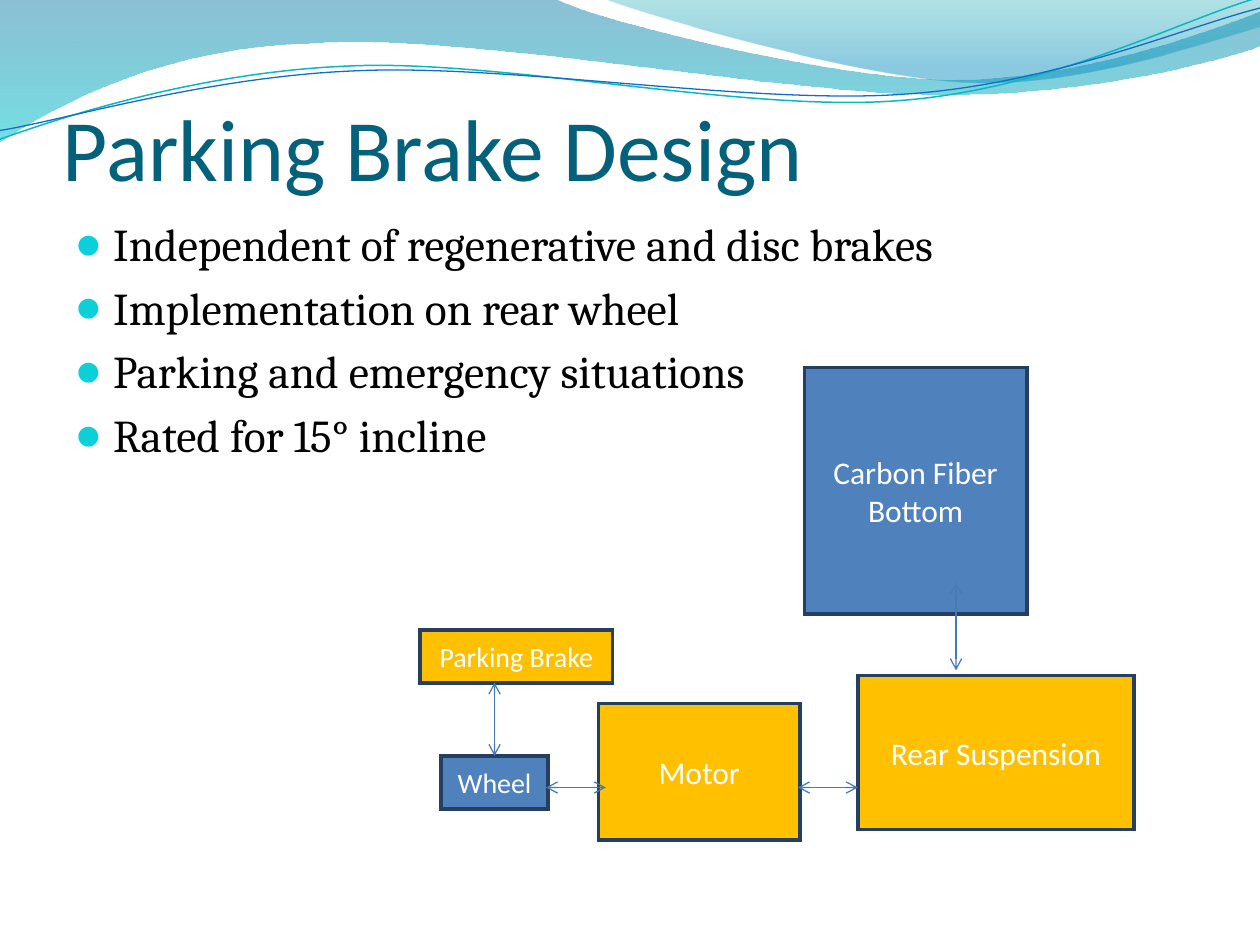
import dataclasses
import typing

import lxml.etree
import pptx
import pptx.dml.color
import pptx.enum.shapes
import pptx.enum.text
import pptx.oxml.ns
import pptx.util

Point = tuple[float, float]
COLUMNS, ROWS = 120, 90
AMBER, BLUE, NAVY, ARROW_BLUE = "FFC000", "4F81BD", "243F60", "4579B8"

deck = pptx.Presentation()
deck.slide_width = pptx.util.Inches(10)
deck.slide_height = pptx.util.Inches(7.5)
slide = deck.slides.add_slide(deck.slide_layouts[6])
shapes = slide.shapes


@dataclasses.dataclass
class Stop:
    position: float
    color: str
    opacity: int  # percent


@dataclasses.dataclass
class Wave:
    """Outline in tenths of the slide width; each step ends at its last point.

    A step of one point is a straight edge, a step of three a Bezier curve.
    """
    start: Point
    steps: list[tuple[Point, ...]]
    stops: tuple[Stop, ...] = ()
    color: str = ""
    weight: float = 0
    rotation: float = 0


@dataclasses.dataclass
class Part:
    name: str
    column: float
    row: float
    columns: float
    rows: float
    fill: str
    size: int = 18


@dataclasses.dataclass
class Link:
    start: Point
    end: Point
    from_top_of: str = ""


def rgb(color: str) -> pptx.dml.color.RGBColor:
    return pptx.dml.color.RGBColor.from_string(color)


def col(count: float) -> pptx.util.Emu:
    return pptx.util.Emu(round(deck.slide_width * count / COLUMNS))


def row(count: float) -> pptx.util.Emu:
    return pptx.util.Emu(round(deck.slide_height * count / ROWS))


def add_xml(parent: typing.Any, tag: str, **attributes: str) -> typing.Any:
    return lxml.etree.SubElement(parent, pptx.oxml.ns.qn(tag), attributes)


def style_text(paragraph: typing.Any, font: str, size: float, color: str) -> None:
    for run in paragraph.runs:
        run.font.name = font
        run.font.size = pptx.util.Pt(size)
        run.font.color.rgb = rgb(color)


def bend_edges(shape: typing.Any, wave: Wave, unit: float) -> None:
    """Turn the edges of the three-point steps into Bezier curves."""
    edges = list(shape._element.spPr.iter(pptx.oxml.ns.qn("a:lnTo")))
    for edge, step in zip(edges, wave.steps):
        if len(step) == 1:
            continue
        edge.tag = pptx.oxml.ns.qn("a:cubicBezTo")
        edge.remove(edge[0])
        for x, y in step:
            add_xml(edge, "a:pt", x=str(round(x * unit) - shape.left),
                    y=str(round(y * unit) - shape.top))


def draw_wave(wave: Wave) -> None:
    unit = deck.slide_width / 10
    anchors = [wave.start] + [step[-1] for step in wave.steps]
    scaled = [(round(x * unit), round(y * unit)) for x, y in anchors]
    builder = shapes.build_freeform(*scaled[0])
    builder.add_line_segments(scaled[1:], close=bool(wave.stops))
    shape = builder.convert_to_shape()
    bend_edges(shape, wave, unit)
    shape.rotation = wave.rotation
    shape.shadow.inherit = False
    if not wave.stops:
        shape.fill.background()
        shape.line.color.rgb = rgb(wave.color)
        shape.line.width = pptx.util.Pt(wave.weight)
        return
    shape.line.fill.background()
    shape.fill.gradient()
    shape.fill.gradient_angle = 270
    for target, stop in zip(shape.fill.gradient_stops, wave.stops):
        target.position = stop.position
        target.color.rgb = rgb(stop.color)
    colors = list(shape._element.spPr.iter(pptx.oxml.ns.qn("a:srgbClr")))
    for color, stop in zip(colors, wave.stops):
        add_xml(color, "a:alpha", val=str(stop.opacity * 1000))


def draw_title(text: str) -> None:
    frame = shapes.add_textbox(col(6), row(3.96), col(108), row(15)).text_frame
    frame.word_wrap = True
    frame.vertical_anchor = pptx.enum.text.MSO_ANCHOR.BOTTOM
    frame.margin_left = frame.margin_right = frame.margin_bottom = 0
    frame.text = text
    style_text(frame.paragraphs[0], "Calibri", 50, "04617B")


def draw_bullets(lines: list[str]) -> None:
    frame = shapes.add_textbox(col(6), row(20), col(108), row(65)).text_frame
    frame.word_wrap = True
    frame.text = "\n".join(lines)
    indent = pptx.util.Inches(0.3)
    for paragraph in frame.paragraphs:
        style_text(paragraph, "Cambria", 26, "000000")
        paragraph.space_before = pptx.util.Pt(5.2)
        props = paragraph._p.get_or_add_pPr()
        props.set("marL", str(indent))
        props.set("indent", str(-indent))
        add_xml(add_xml(props, "a:buClr"), "a:srgbClr", val="0BD0D9")
        add_xml(props, "a:buSzPct", val="95000")
        add_xml(props, "a:buFont", typeface="Calibri")
        add_xml(props, "a:buChar", char="●")


def draw_part(part: Part) -> typing.Any:
    box = shapes.add_shape(pptx.enum.shapes.MSO_SHAPE.RECTANGLE, col(part.column),
                           row(part.row), col(part.columns), row(part.rows))
    box.shadow.inherit = False
    box.fill.solid()
    box.fill.fore_color.rgb = rgb(part.fill)
    box.line.color.rgb = rgb(NAVY)
    box.line.width = pptx.util.Pt(2)
    add_xml(box._element.spPr.find(pptx.oxml.ns.qn("a:ln")), "a:miter", lim="800000")
    frame = box.text_frame
    frame.word_wrap = True
    frame.vertical_anchor = pptx.enum.text.MSO_ANCHOR.MIDDLE
    frame.text = part.name
    frame.paragraphs[0].alignment = pptx.enum.text.PP_ALIGN.CENTER
    style_text(frame.paragraphs[0], "Calibri", part.size, "FFFFFF")
    return box


def draw_link(link: Link, boxes: dict[str, typing.Any]) -> None:
    arrow = shapes.add_connector(pptx.enum.shapes.MSO_CONNECTOR.STRAIGHT,
                                 col(link.start[0]), row(link.start[1]),
                                 col(link.end[0]), row(link.end[1]))
    if link.from_top_of:
        arrow.begin_connect(boxes[link.from_top_of], 0)
    arrow.line.color.rgb = rgb(ARROW_BLUE)
    arrow.line.width = pptx.util.Pt(0.75)
    properties = arrow._element.spPr
    outline = properties.find(pptx.oxml.ns.qn("a:ln"))
    for tip in ("a:headEnd", "a:tailEnd"):
        add_xml(outline, tip, type="arrow")
    add_xml(properties, "a:effectLst")


WAVES = [
    Wave((0, 0), [((4.4, -0.01),), ((4.76, 0.17), (6.64, 0.63), (7.58, 0.63)),
                  ((8.53, 0.63), (9.58, 0.26), (10, 0.09)), ((10.01, 0.36),),
                  ((9.83, 0.44), (8.7, 0.76), (7.46, 0.75)),
                  ((6.22, 0.75), (3.82, 0.28), (2.57, 0.34)),
                  ((1.29, 0.36), (0.46, 0.83), (-0.01, 1.13))],
         stops=(Stop(0, "0074A1", 45), Stop(1, "00C6CF", 55))),
    Wave((4.79, -0.01), [((5.09, 0.11), (6.82, 0.62), (7.69, 0.65)),
                         ((8.56, 0.69), (9.61, 0.32), (10, 0.21)), ((10, 0),)],
         stops=(Stop(0, "00A1A9", 30), Stop(0.8, "008BBF", 45))),
    Wave((-0.02, 0.87), [((0.47, 0.72), (1.58, 0.41), (2.78, 0.42)),
                         ((3.96, 0.42), (5.91, 0.94), (7.12, 0.9)),
                         ((8.32, 0.87), (9.4, 0.36), (10, 0.22))],
         color="0AB8BF", weight=0.85, rotation=357.3),
    Wave((-0.02, 0.8), [((0.46, 0.75), (1.64, 0.45), (2.83, 0.46)),
                        ((4.03, 0.46), (5.96, 0.88), (7.16, 0.85)),
                        ((8.35, 0.83), (9.42, 0.42), (10.02, 0.3))],
         color="0F6FC6", weight=0.75, rotation=357.3),
]
PARTS = [
    Part("Motor", 57, 67, 19.2, 13, AMBER),
    Part("Wheel", 42, 72, 10.2, 5.05, BLUE, 16),
    Part("Rear Suspension", 81.7, 64.35, 26.3, 14.65, AMBER),
    Part("Carbon Fiber Bottom", 76.6, 35, 21.2, 23.5, BLUE),
    Part("Parking Brake", 40, 60, 18.35, 5.05, AMBER, 16),
]
LINKS = [
    Link((52, 75), (57.7, 75)),
    Link((91.05, 63.85), (91.05, 55.5)),
    Link((47.1, 72), (47.1, 65), from_top_of="Wheel"),
    Link((76, 75), (81.7, 75)),
]

# Wave banner
for banner_wave in WAVES:
    draw_wave(banner_wave)

# Heading and key points
draw_title("Parking Brake Design")
draw_bullets(["Independent of regenerative and disc brakes", "Implementation on rear wheel",
              "Parking and emergency situations", "Rated for 15° incline"])

# Brake system diagram
part_boxes = {part.name: draw_part(part) for part in PARTS}
for part_link in LINKS:
    draw_link(part_link, part_boxes)

deck.save("out.pptx")
